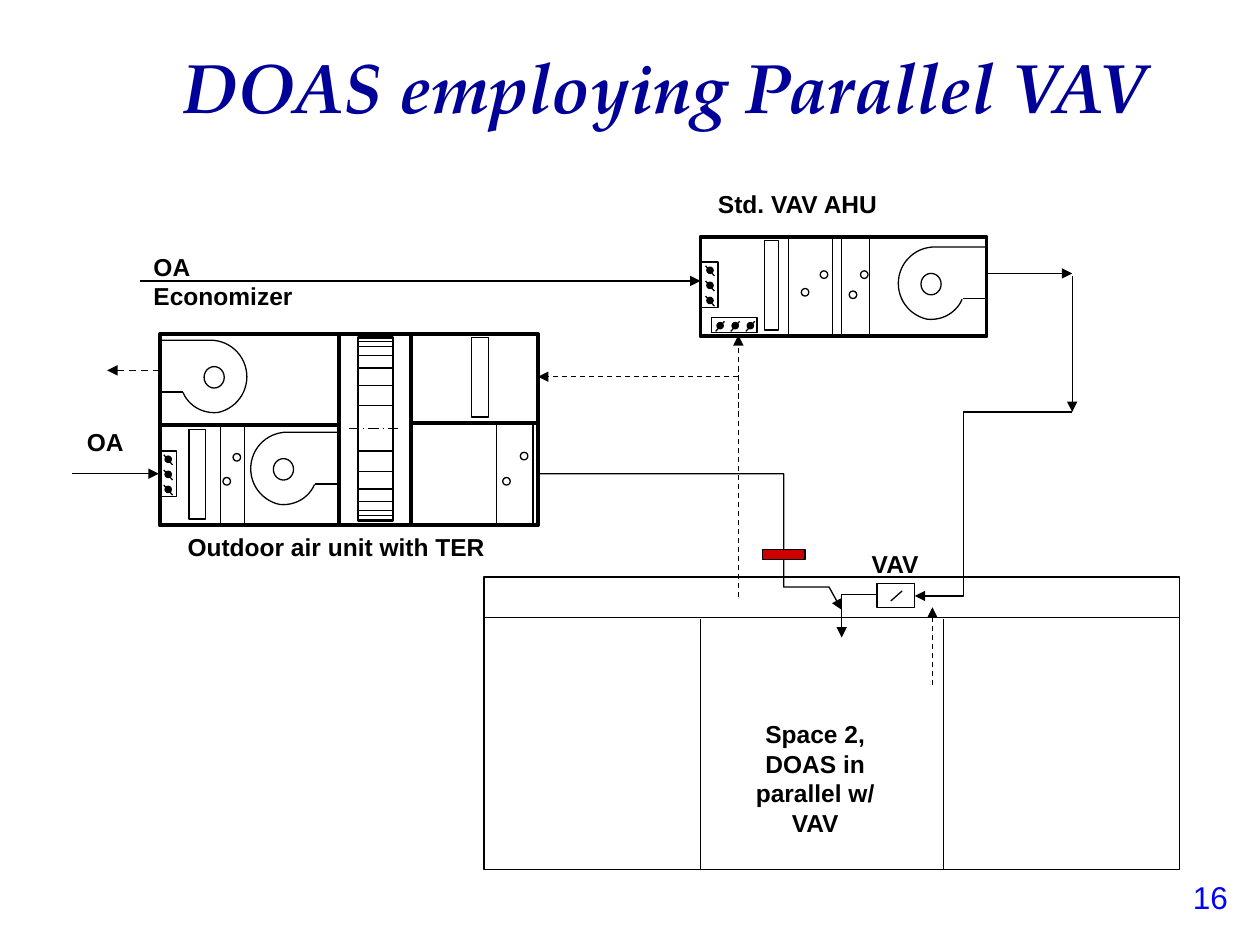
from math import cos, sin, radians
from lxml.etree import SubElement
from pptx import Presentation
from pptx.dml.color import RGBColor as Rgb
from pptx.enum.dml import MSO_LINE as Dash
from pptx.enum.shapes import MSO_CONNECTOR as Conn, MSO_SHAPE as Kind
from pptx.enum.text import PP_ALIGN as Align
from pptx.oxml.ns import qn
from pptx.util import Inches, Pt

PX = Inches(1) // 100


class Theme:
    ink = Rgb(0, 0, 0)
    navy = Rgb(0, 0, 0x99)
    blue = Rgb(0, 0, 0xFF)
    red = Rgb(0xCC, 0, 0)
    sans = "Arial"
    serif = "TeX Gyre Pagella"
    head = 40
    label = 14
    page = 18
    thin = 0.75
    mid = 1.5
    bold = 2.25


class Pen:
    def __init__(self, shapes, x=0, y=0):
        self.shapes, self.x, self.y = shapes, x, y

    def at(self, x, y):
        return round((self.x + x) * PX), round((self.y + y) * PX)

    def shift(self, x, y):
        return Pen(self.shapes, self.x + x, self.y + y)

    def ink(self, item, width, dash=None, tip=False):
        item.line.color.rgb = Theme.ink
        item.line.width = Pt(width)
        if dash:
            item.line.dash_style = dash
        if tip:
            edge = item._element.spPr.find(qn("a:ln"))
            SubElement(edge, qn("a:tailEnd"), type="triangle")

    def shape(self, box, width=Theme.thin, kind=Kind.RECTANGLE, fill=None):
        x, y, w, h = box
        item = self.shapes.add_shape(kind, *self.at(x, y), w * PX, h * PX)
        item.shadow.inherit = False
        if fill is None:
            item.fill.background()
        else:
            item.fill.solid()
            item.fill.fore_color.rgb = fill
        self.ink(item, width)

    def line(self, start, end, width=Theme.thin, dash=None, tip=False):
        item = self.shapes.add_connector(
            Conn.STRAIGHT, *self.at(*start), *self.at(*end))
        self.ink(item, width, dash, tip)
        SubElement(item._element.spPr, qn("a:effectLst"))

    def trace(self, dots, tip=False):
        first, *rest = [self.at(*dot) for dot in dots]
        form = self.shapes.build_freeform(*first)
        form.add_line_segments(rest, close=False)
        item = form.convert_to_shape()
        item.shadow.inherit = False
        item.fill.background()
        self.ink(item, Theme.thin, tip=tip)

    def text(self, box, words, size=Theme.label, color=Theme.ink,
             face=Theme.sans, bold=True, italic=False, align=Align.LEFT):
        x, y, w, h = box
        frame = self.shapes.add_textbox(*self.at(x, y), w * PX, h * PX).text_frame
        frame.word_wrap = True
        frame.text = words
        for para in frame.paragraphs:
            para.alignment = align
            for run in para.runs:
                font = run.font
                font.size, font.name = Pt(size), face
                font.bold, font.italic = bold, italic
                font.color.rgb = color


def fan(pen, flip=False):
    def turn(x):
        return 70 - x if flip else x

    steps = [(min(29, 25 + step / 3), radians(30 + 6 * step)) for step in range(41)]
    scroll = [(turn(29 + r * cos(a)), 29 + r * sin(a)) for r, a in steps]
    pen.shape((36 if flip else 18, 21, 16, 17), kind=Kind.OVAL)
    pen.trace(scroll + [(turn(70), 0)])
    pen.trace([(turn(x), y) for x, y in ((69, -1), (69, 41), (51, 41))])


def damper(pen, upright):
    pen.shape((0, 0, 13, 36) if upright else (0, 0, 36, 12))
    for gap in range(0, 36, 12):
        blade = pen.shift(0, gap) if upright else pen.shift(gap, 0)
        blade.shape((4, 4, 5, 5), kind=Kind.FLOWCHART_CONNECTOR, fill=Theme.ink)
        near, far = (3, 10) if upright else (10, 3)
        blade.line((near, 3), (far, 11))


def coil(pen, box, rings):
    pen.shape(box)
    for x, y in rings:
        pen.shape((x, y, 6, 6), kind=Kind.FLOWCHART_CONNECTOR)


def group(slide, x, y):
    return Pen(slide.shapes.add_group_shape().shapes, x, y)


def ahu(pen):
    fan(pen.shift(157, 8))
    damper(pen.shift(9, 64), False)
    damper(pen.shift(1, 20), True)
    pen.shape((0, 0, 227, 79), Theme.bold)
    pen.shape((51, 3, 11, 71))
    coil(pen, (70, -1, 35, 79), [(80, 41), (95, 27)])
    coil(pen, (112, -1, 22, 80), [(118, 43), (127, 27)])


def wheel(pen):
    pen.shape((0, 0, 28, 145), Theme.mid)
    for rib in (3, 7, 14, 24, 38, 54):
        for y in (rib, 144 - rib):
            pen.line((0, y), (28, y))
    pen.line((-7, 72), (34, 72), dash=Dash.LONG_DASH_DOT)


def outdoor(pen):
    fan(pen.shift(72, 78))
    fan(pen.shift(-1, 5), True)
    damper(pen.shift(0, 93), True)
    for x, w in ((142, 57), (0, 142), (199, 101)):
        pen.shape((x, 0, w, 152), Theme.bold)
    pen.line((-1, 72), (141, 72), Theme.bold)
    pen.line((198, 71), (298, 71), Theme.bold)
    pen.shape((23, 76, 13, 71))
    pen.shape((247, 3, 14, 63))
    coil(pen, (267, 72, 29, 80), [(286, 94), (272, 114)])
    coil(pen, (48, 72, 19, 79), [(50, 114), (58, 95)])
    wheel(pen.shift(157, 3))


def rooms(pen):
    pen.shape((0, 0, 552, 232))
    pen.line((0, 32), (552, 32))
    for x in (172, 365):
        pen.line((x, 33), (x, 232))


def valve(pen):
    pen.shape((0, 0, 30, 19))
    pen.line((20, 6), (11, 14))


def ducts(pen):
    for start, end in (((851, 219), (851, 327)), ((783, 217), (851, 217)),
                       ((111, 223), (556, 223)), ((57, 376), (126, 376))):
        pen.line(start, end, tip=True)
    for start, end in (((586, 474), (586, 266)), ((586, 299), (427, 299)),
                       ((740, 544), (740, 482))):
        pen.line(start, end, dash=Dash.DASH, tip=True)
    pen.line((127, 294), (85, 294), 1, Dash.DASH, True)
    pen.trace([(851, 327), (765, 327), (765, 473), (726, 473)], True)
    pen.trace([(696, 472), (668, 472), (668, 506)], True)
    pen.trace([(427, 376), (622, 376), (622, 466), (658, 466), (668, 484)], True)
    pen.shape((605, 436, 34, 8), fill=Theme.red)


def labels(pen):
    for box, words in (((560, 145, 156, 33), "Std. VAV AHU"),
                       ((112, 195, 147, 57), "OA Economizer"),
                       ((59, 334, 62, 33), "OA"),
                       ((139, 417, 276, 33), "Outdoor air unit with TER"),
                       ((682, 431, 62, 33), "VAV")):
        pen.text(box, words)
    pen.text((551, 566, 192, 103), "Space 2,\nDOAS in\nparallel w/\nVAV",
             align=Align.CENTER)
    pen.text((110, 30, 835, 129), "DOAS employing Parallel VAV", Theme.head,
             Theme.navy, Theme.serif, italic=True, align=Align.CENTER)
    pen.text((937, 692, 63, 40), "16", Theme.page, Theme.blue, bold=False)


def main():
    deck = Presentation()
    deck.slide_width, deck.slide_height = 1000 * PX, 750 * PX
    slide = deck.slides.add_slide(deck.slide_layouts[6])
    ahu(group(slide, 556, 188))
    rooms(group(slide, 384, 458))
    outdoor(group(slide, 127, 265))
    valve(group(slide, 696, 463))
    page = Pen(slide.shapes)
    ducts(page)
    labels(page)
    deck.save("out.pptx")


if __name__ == "__main__":
    main()
